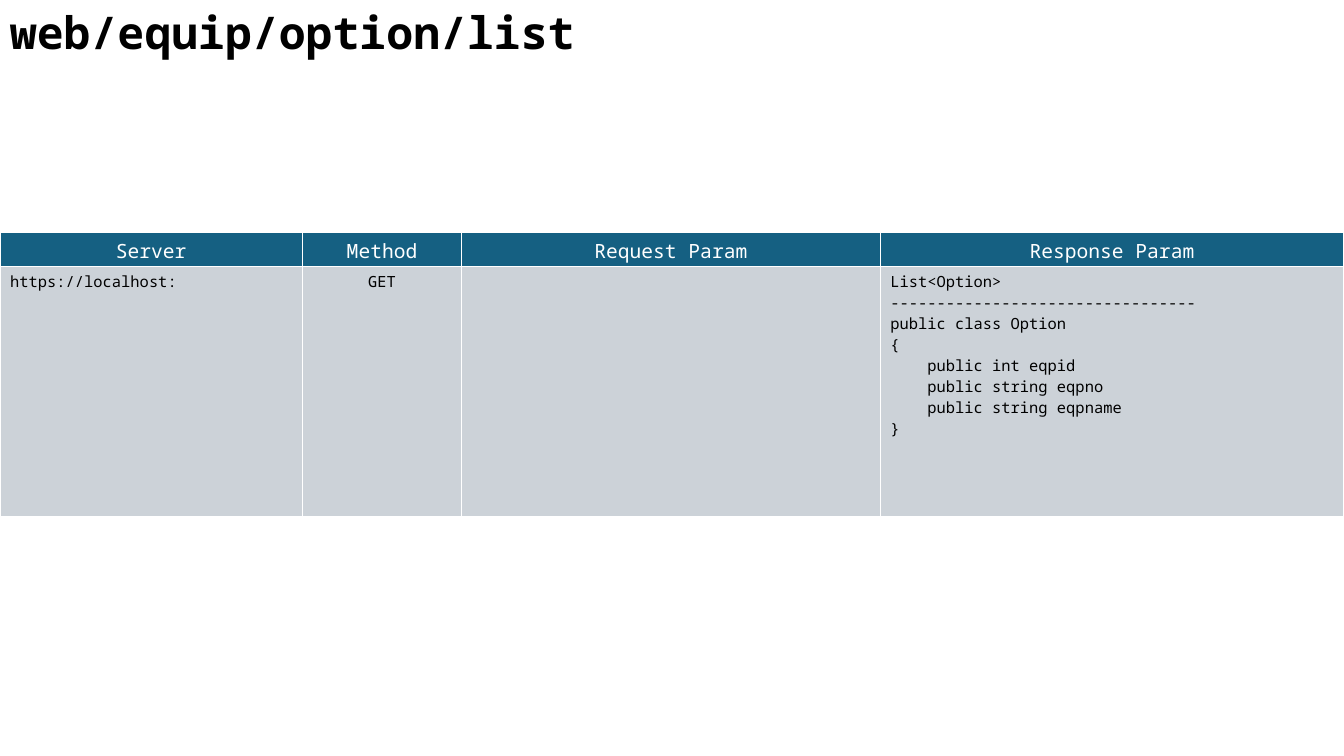
from lxml.etree import SubElement
from pptx import Presentation
from pptx.dml.color import RGBColor
from pptx.enum.text import MSO_AUTO_SIZE, PP_ALIGN
from pptx.oxml.ns import qn
from pptx.util import Inches, Pt

FONT = "Noto Sans Mono"
COLORS = {
    "text": "000000",
    "header": "156082",
    "header_text": "FFFFFF",
    "body": "CCD2D8",
    "border": "FFFFFF",
}
COLUMN_WIDTHS = [3, 1.58, 4.15, 4.6]
ROW_HEIGHTS = [0.33, 2.48]
HEADINGS = ["Server", "Method", "Request Param", "Response Param"]
RESPONSE = """List<Option>
---------------------------------
public class Option
{
    public int eqpid
    public string eqpno
    public string eqpname
}"""
VALUES = ["https://localhost:", "GET", "", RESPONSE]


def color(name):
    return RGBColor.from_string(COLORS[name])


def write_text(text_frame, text, size, color_name, alignment=PP_ALIGN.LEFT, bold=False):
    text_frame.text = text
    for paragraph in text_frame.paragraphs:
        paragraph.alignment = alignment
        paragraph.font.name = FONT
        paragraph.font.size = Pt(size)
        paragraph.font.bold = bold
        paragraph.font.color.rgb = color(color_name)


def add_title(slide, text):
    title = slide.shapes.add_textbox(0, 0, Inches(9.45), Inches(0.64))
    title.text_frame.word_wrap = True
    title.text_frame.auto_size = MSO_AUTO_SIZE.SHAPE_TO_FIT_TEXT
    write_text(title.text_frame, text, 32, "text", bold=True)


def add_borders(cell):
    properties = cell._tc.get_or_add_tcPr()
    for side in ("a:lnL", "a:lnR", "a:lnT", "a:lnB"):
        line = SubElement(properties, qn(side), w=str(Pt(1)))
        fill = SubElement(line, qn("a:solidFill"))
        SubElement(fill, qn("a:srgbClr"), val=COLORS["border"])


def fill_cell(cell, text, size, text_color, fill_color, alignment):
    add_borders(cell)
    cell.fill.solid()
    cell.fill.fore_color.rgb = color(fill_color)
    write_text(cell.text_frame, text, size, text_color, alignment)


def add_endpoint_table(slide):
    frame = slide.shapes.add_table(
        len(ROW_HEIGHTS), len(COLUMN_WIDTHS), 0, Inches(2.31),
        Inches(sum(COLUMN_WIDTHS)), Inches(sum(ROW_HEIGHTS)),
    )
    table = frame.table
    for row, height in zip(table.rows, ROW_HEIGHTS):
        row.height = Inches(height)
    for index, width in enumerate(COLUMN_WIDTHS):
        table.columns[index].width = Inches(width)
        fill_cell(table.cell(0, index), HEADINGS[index], 14,
                  "header_text", "header", PP_ALIGN.CENTER)
        alignment = PP_ALIGN.CENTER if HEADINGS[index] == "Method" else PP_ALIGN.LEFT
        fill_cell(table.cell(1, index), VALUES[index], 11, "text", "body", alignment)


def main():
    presentation = Presentation()
    presentation.slide_width = Inches(13.33)
    presentation.slide_height = Inches(7.5)
    slide = presentation.slides.add_slide(presentation.slide_layouts[6])
    add_title(slide, "web/equip/option/list")
    add_endpoint_table(slide)
    presentation.save("out.pptx")


if __name__ == "__main__":
    main()
